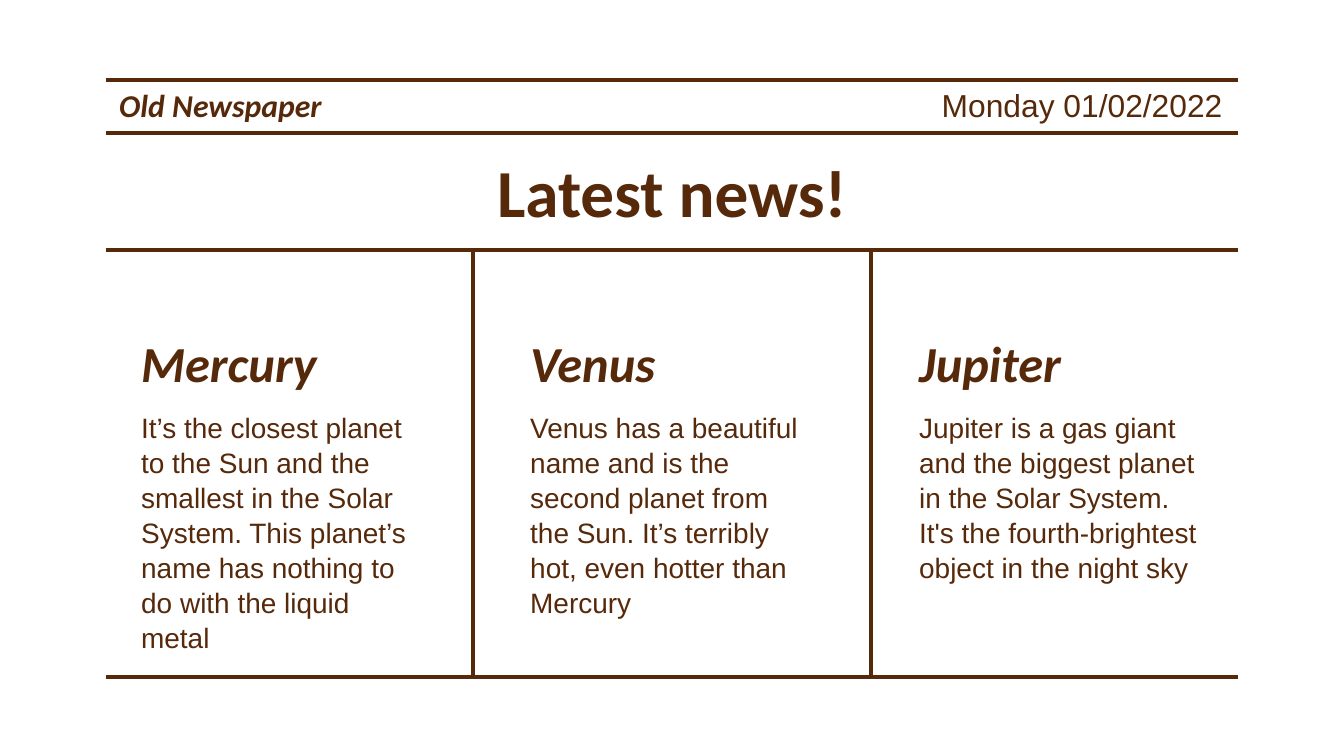
from lxml.etree import SubElement
from pptx import Presentation
from pptx.dml.color import RGBColor
from pptx.enum.shapes import MSO_CONNECTOR
from pptx.enum.text import MSO_ANCHOR, PP_ALIGN
from pptx.oxml.ns import qn
from pptx.util import Emu, Inches, Pt

EMU_PER_PX = 914400 / 134.4
BROWN = "56290B"
LEFT, RIGHT = 106, 1238
HEADER_TOP, HEADER_BOTTOM = 80, 133
STORIES_TOP, STORIES_BOTTOM = 250, 677
STORY_LEFT, STORY_STEP, STORY_WIDTH = 128, 389, 309

STORIES = [
    ("Mercury", "It’s the closest planet to the Sun and the smallest in the Solar System. "
                "This planet’s name has nothing to do with the liquid metal"),
    ("Venus", "Venus has a beautiful name and is the second planet from the Sun. "
              "It’s terribly hot, even hotter than Mercury"),
    ("Jupiter", "Jupiter is a gas giant and the biggest planet in the Solar System. "
                "It's the fourth-brightest object in the night sky"),
]


def px(length):
    """Turn pixels into EMU."""
    return Emu(round(length * EMU_PER_PX))


def color(value):
    """Turn a hex string into a colour."""
    return RGBColor.from_string(value)


def add_rule(slide, x1, y1, x2, y2):
    """Draw one straight newspaper rule."""
    rule = slide.shapes.add_connector(MSO_CONNECTOR.STRAIGHT, px(x1), px(y1), px(x2), px(y2))
    rule.line.color.rgb = color(BROWN)
    rule.line.width = Pt(2.25)
    SubElement(rule._element.spPr, qn("a:effectLst"))


def add_text(slide, words, box, size, font="Arial", bold=False, italic=False,
             align=PP_ALIGN.LEFT, spacing=1.0):
    """Place one paragraph of text in a box of left, top, width and height."""
    frame = slide.shapes.add_textbox(*map(px, box)).text_frame
    frame.word_wrap = True
    frame.vertical_anchor = MSO_ANCHOR.TOP
    frame.margin_left = frame.margin_right = Inches(0.1)
    frame.margin_top = frame.margin_bottom = Inches(0.1)
    paragraph = frame.paragraphs[0]
    paragraph.alignment = align
    paragraph.line_spacing = spacing
    run = paragraph.add_run()
    run.text = words
    run.font.name = font
    run.font.size = Pt(size)
    run.font.bold = bold
    run.font.italic = italic
    run.font.color.rgb = color(BROWN)


def add_story(slide, left, planet, story):
    """Place a planet's headline above its story."""
    add_text(slide, planet, (left, 319, STORY_WIDTH, 78), 27, "Calibri", bold=True, italic=True)
    add_text(slide, story, (left, 396, STORY_WIDTH, 263), 15, spacing=1.04)


def main():
    """Build the newspaper slide."""
    deck = Presentation()
    deck.slide_width, deck.slide_height = px(1344), px(756)
    slide = deck.slides.add_slide(deck.slide_layouts[6])

    for y in (HEADER_TOP, HEADER_BOTTOM, STORIES_TOP, STORIES_BOTTOM):
        add_rule(slide, LEFT, y, RIGHT, y)
    for x in (473, 871):
        add_rule(slide, x, STORIES_TOP, x, STORIES_BOTTOM)

    add_text(slide, "Old Newspaper", (LEFT, 72, 360, 75), 17, "Calibri", bold=True, italic=True)
    add_text(slide, "Monday 01/02/2022", (856, 72, 380, 75), 17, align=PP_ALIGN.RIGHT)
    add_text(slide, "Latest news!", (105, 137, 1134, 85), 36, "Calibri", bold=True,
             align=PP_ALIGN.CENTER)

    for column, (planet, story) in enumerate(STORIES):
        add_story(slide, STORY_LEFT + column * STORY_STEP, planet, story)

    deck.save("out.pptx")


if __name__ == "__main__":
    main()
